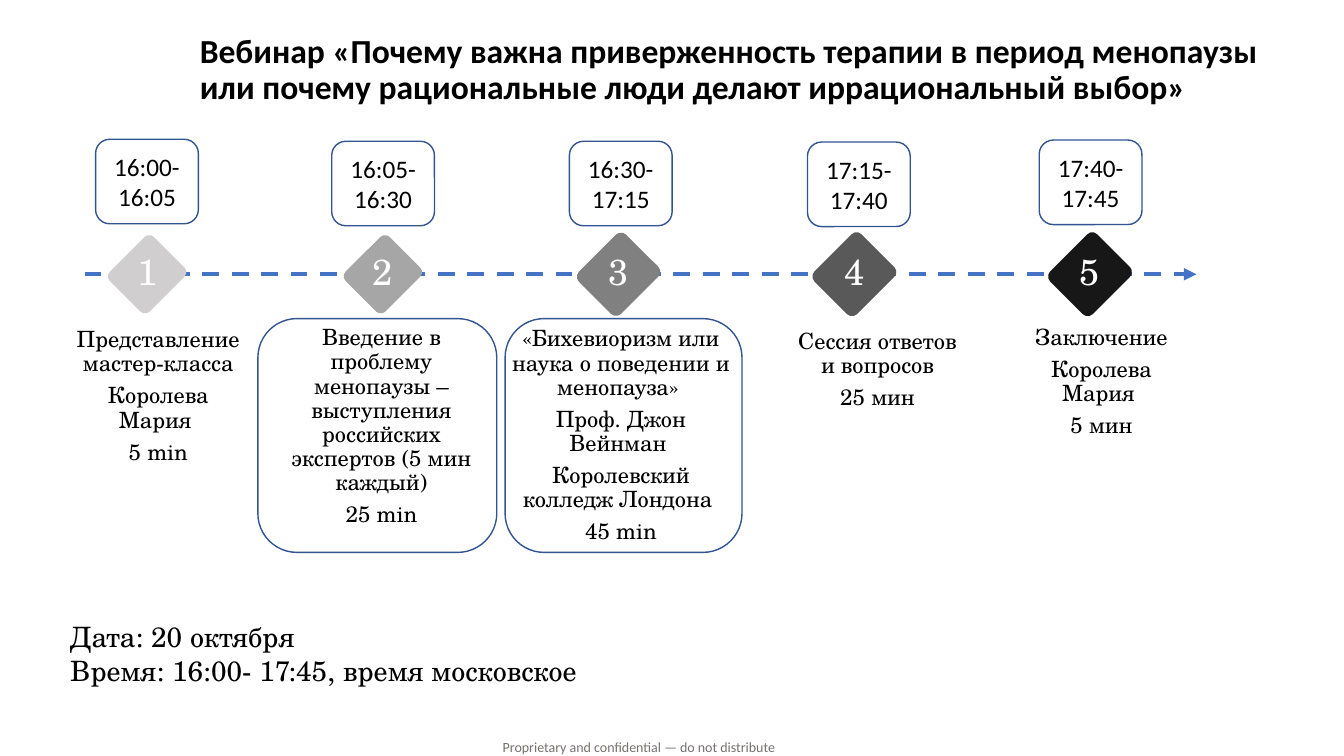
from lxml import etree
from pptx import Presentation
from pptx.dml.color import RGBColor
from pptx.enum.dml import MSO_LINE
from pptx.enum.shapes import MSO_CONNECTOR, MSO_SHAPE
from pptx.enum.text import MSO_ANCHOR, PP_ALIGN
from pptx.oxml.ns import qn
from pptx.util import Cm, Pt

BLACK = RGBColor(0x00, 0x00, 0x00)
WHITE = RGBColor(0xFF, 0xFF, 0xFF)
GREY = RGBColor(0x76, 0x71, 0x71)
ARROW_BLUE = RGBColor(0x44, 0x72, 0xC4)
FRAME_BLUE = RGBColor(0x32, 0x54, 0x91)
SANS, SERIF = "Calibri", "TeX Gyre Schola"

TITLE = ("Вебинар «Почему важна приверженность терапии в период менопаузы "
         "или почему рациональные люди делают иррациональный выбор»")
WHEN = ["Дата: 20 октября", "Время: 16:00- 17:45, время московское"]
FOOTER = "Proprietary and confidential — do not distribute"

# Lengths are centimetres; boxes are left, top, width, height.
STEPS = [
    {"time": "16:00-16:05", "time_at": (2.41, 3.51), "diamond": (1.57, 1.42),
     "colour": RGBColor(0xD0, 0xCE, 0xCE), "box": (1.6, 8.15, 4.78, 3.61),
     "lines": ["Представление мастер-класса", "Королева Мария ", "5 min"]},
    {"time": "16:05-16:30", "time_at": (8.36, 3.56), "diamond": (1.57, 1.42),
     "colour": RGBColor(0xA6, 0xA6, 0xA6), "box": (7.09, 8.1, 5.05, 5.41),
     "lines": ["Введение в проблему менопаузы – выступления российских "
               "экспертов (5 мин каждый)", "25 min"]},
    {"time": "16:30-17:15", "time_at": (14.35, 3.56), "diamond": (1.68, 1.5),
     "colour": RGBColor(0x80, 0x80, 0x80), "box": (12.6, 8.13, 6.1, 5.89),
     "lines": ["«Бихевиоризм или наука о поведении и менопауза» ",
               "Проф. Джон Вейнман ", "Королевский колледж Лондона ", "45 min"]},
    {"time": "17:15-17:40", "time_at": (20.35, 3.58), "diamond": (1.68, 1.52),
     "colour": RGBColor(0x59, 0x59, 0x59), "box": (19.84, 8.2, 4.55, 2.34),
     "lines": ["Сессия ответов и вопросов", "25 мин"]},
    {"time": "17:40-17:45", "time_at": (26.19, 3.53), "diamond": (1.68, 1.52),
     "colour": RGBColor(0x18, 0x17, 0x17), "box": (25.37, 8.1, 4.78, 3.02),
     "lines": ["Заключение", "Королева Мария ", "5 мин"]},
]
FRAMES = [(6.5, 8.03, 6.02, 5.89), (12.73, 8.03, 5.97, 5.89)]
TIME_SIZE = (2.59, 2.13)
NUMBER_SIZE = (1.88, 1.3)
AXIS_LEFT, AXIS_RIGHT, AXIS_TOP = 2.13, 30.15, 6.91
FIRST_CENTRE, STEP_WIDTH = 3.71, 5.94

TITLE_STYLE = {"size": Pt(24), "name": SANS, "bold": True}
TIME_STYLE = {"size": Pt(18), "name": SANS}
NUMBER_STYLE = {"size": Pt(25.9), "name": SERIF}
STEP_STYLE = {"size": Pt(16), "name": SERIF}
WHEN_STYLE = {"size": Pt(20), "name": SERIF}
FOOTER_STYLE = {"size": Pt(10), "name": SANS}
CENTRED = {"alignment": PP_ALIGN.CENTER}
TIGHT = {"alignment": PP_ALIGN.CENTER, "line_spacing": 0.9}


def set_attributes(target, values):
    for name, value in values.items():
        setattr(target, name, value)


def write(shape, lines, style, layout, colour=BLACK, anchor=MSO_ANCHOR.TOP):
    frame = shape.text_frame
    frame.word_wrap = True
    frame.vertical_anchor = anchor
    for index, line in enumerate(lines):
        paragraph = frame.add_paragraph() if index else frame.paragraphs[0]
        paragraph.text = line
        set_attributes(paragraph, layout)
        set_attributes(paragraph.font, style)
        paragraph.font.color.rgb = colour


def add_text(slide, box, *args, **options):
    shape = slide.shapes.add_textbox(*map(Cm, box))
    write(shape, *args, **options)
    return shape


def add_rounded(slide, box, fill=None):
    """Add a filled rounded box, or an outlined one when no fill is given."""
    shape = slide.shapes.add_shape(MSO_SHAPE.ROUNDED_RECTANGLE, *map(Cm, box))
    shape.shadow.inherit = False
    if fill is None:
        shape.fill.background()
        shape.line.color.rgb = FRAME_BLUE
        shape.line.width = Pt(1)
    else:
        shape.fill.solid()
        shape.fill.fore_color.rgb = fill
        shape.line.fill.background()
    return shape


def centred_box(centre, size):
    width, height = size
    return centre - width / 2, AXIS_TOP - height / 2, width, height


def add_axis(slide):
    axis = slide.shapes.add_connector(
        MSO_CONNECTOR.STRAIGHT, Cm(AXIS_LEFT), Cm(AXIS_TOP), Cm(AXIS_RIGHT), Cm(AXIS_TOP))
    axis.line.color.rgb = ARROW_BLUE
    set_attributes(axis.line, {"width": Pt(3), "dash_style": MSO_LINE.DASH})
    properties = axis._element.spPr
    etree.SubElement(properties.find(qn("a:ln")), qn("a:tailEnd"), type="triangle")
    etree.SubElement(properties, qn("a:effectLst"))


def add_step(slide, index, step):
    centre = FIRST_CENTRE + index * STEP_WIDTH
    diamond = add_rounded(slide, centred_box(centre, step["diamond"]), step["colour"])
    diamond.adjustments[0] = 0.117
    diamond.rotation = 315
    add_text(slide, centred_box(centre, NUMBER_SIZE), [str(index + 1)], NUMBER_STYLE,
             TIGHT, colour=WHITE, anchor=MSO_ANCHOR.MIDDLE)
    add_text(slide, step["box"], step["lines"], STEP_STYLE, TIGHT | {"space_after": Pt(5.6)})
    time_box = add_rounded(slide, step["time_at"] + TIME_SIZE)
    write(time_box, [step["time"]], TIME_STYLE, CENTRED, anchor=MSO_ANCHOR.MIDDLE)


def main():
    presentation = Presentation()
    presentation.slide_width, presentation.slide_height = Cm(33.87), Cm(19.05)
    slide = presentation.slides.add_slide(presentation.slide_layouts[5])

    title = slide.shapes.title
    set_attributes(title, {"left": Cm(4.78), "top": Cm(0.46),
                           "width": Cm(27.69), "height": Cm(2.62)})
    write(title, [TITLE], TITLE_STYLE, {"alignment": PP_ALIGN.LEFT, "line_spacing": 0.9},
          anchor=MSO_ANCHOR.MIDDLE)

    footer = add_text(slide, (12.67, 18.36, 8.48, 0.81), [FOOTER], FOOTER_STYLE, {},
                      colour=GREY, anchor=MSO_ANCHOR.BOTTOM)
    set_attributes(footer.text_frame, {"margin_left": 0, "margin_right": 0})

    add_axis(slide)
    for index, step in enumerate(STEPS):
        add_step(slide, index, step)
    for box in FRAMES:
        add_rounded(slide, box)
    add_text(slide, (1.52, 15.49, 14.38, 1.96), WHEN, WHEN_STYLE, {})
    presentation.save("out.pptx")


if __name__ == "__main__":
    main()
